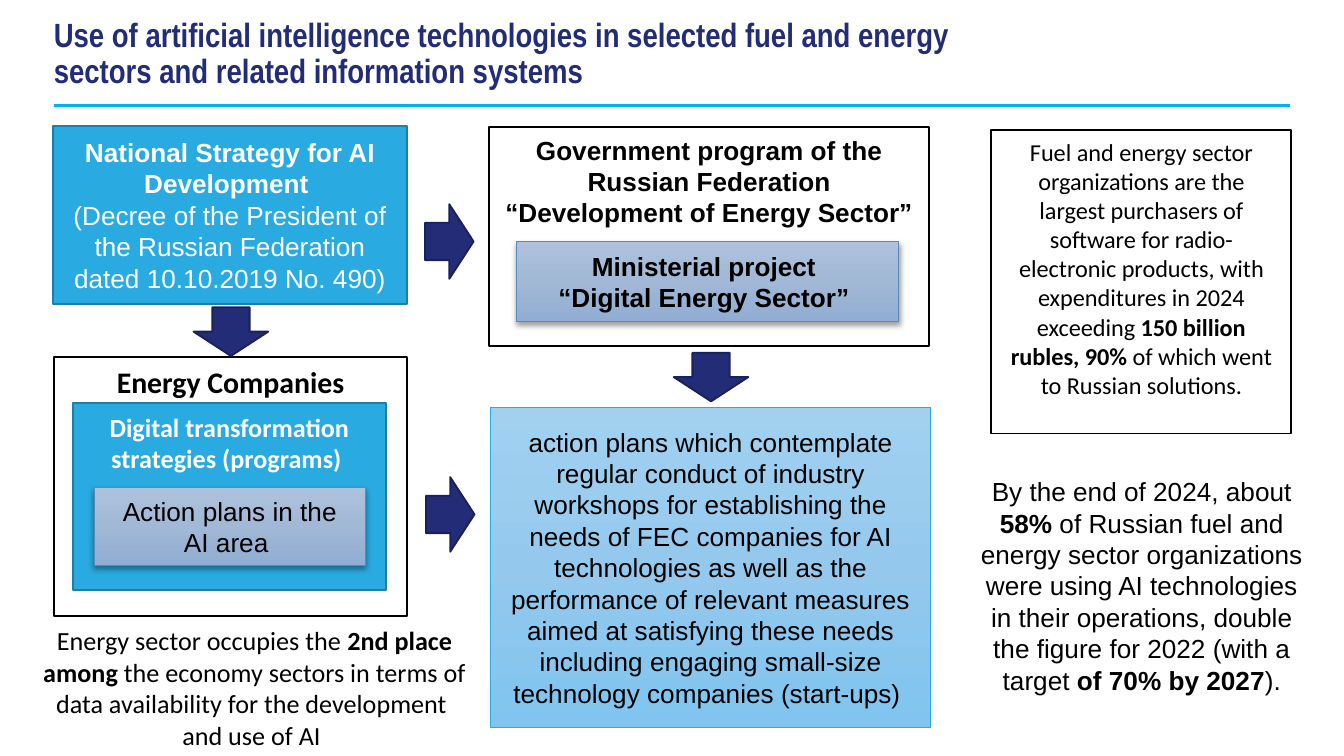
import copy

import lxml.etree
import pptx
import pptx.dml.color
import pptx.enum.shapes
import pptx.enum.text
import pptx.oxml.ns
import pptx.util

Pt = pptx.util.Pt
qn = pptx.oxml.ns.qn
SHAPES = pptx.enum.shapes.MSO_SHAPE
ANCHOR = pptx.enum.text.MSO_ANCHOR
ALIGN = pptx.enum.text.PP_ALIGN
AUTO_SIZE = pptx.enum.text.MSO_AUTO_SIZE

NAVY = "232C77"
BLUE = "29AAE1"
BLUE_EDGE = "1E7EA6"
STEEL = ("AFC2DC", "A1B8D6", "91ADD3")
SKY = ("A2D1F0", "94C9ED", "80C4EF")
INSETS = (7.2, 3.6, 7.2, 3.6)
WIDE_INSETS = (7.92, 4.32, 7.92, 4.32)


def color(value):
    return pptx.dml.color.RGBColor.from_string(value)


def set_attributes(target, values):
    for name, value in values.items():
        setattr(target, name, value)


class SlideBuilder:
    def __init__(self, presentation):
        self.slide = presentation.slides.add_slide(presentation.slide_layouts[5])

    def fill_text(self, shape, paragraphs, font="Arial", size=14, ink="000000",
                  anchor=ANCHOR.TOP, align=ALIGN.CENTER, insets=INSETS,
                  spacing=None, auto_size=AUTO_SIZE.NONE):
        frame = shape.text_frame
        sides = ("margin_left", "margin_top", "margin_right", "margin_bottom")
        set_attributes(frame, {"word_wrap": True, "vertical_anchor": anchor, "auto_size": auto_size})
        set_attributes(frame, dict(zip(sides, map(Pt, insets))))
        for index, runs in enumerate(paragraphs):
            paragraph = frame.add_paragraph() if index else frame.paragraphs[0]
            set_attributes(paragraph, {"alignment": align, "line_spacing": spacing})
            for text, bold in runs:
                for part, line in enumerate(text.split("\n")):
                    if part:
                        paragraph.add_line_break()
                        paragraph._p[-1].append(copy.deepcopy(run._r.rPr))
                    run = paragraph.add_run()
                    run.text = line
                    set_attributes(run.font, {"name": font, "size": Pt(size), "bold": bold})
                    run.font.color.rgb = color(ink)

    def title(self, box, text):
        shape = self.slide.shapes.title
        set_attributes(shape, dict(zip(("left", "top", "width", "height"), map(Pt, box))))
        self.fill_text(shape, [[(text, True)]], "Arial Narrow", 18, NAVY, ANCHOR.BOTTOM,
                       ALIGN.LEFT, (0, 3.6, 7.2, 3.6), 0.9)

    def rule(self, left, right, y):
        connector = self.slide.shapes.add_connector(
            pptx.enum.shapes.MSO_CONNECTOR.STRAIGHT, Pt(left), Pt(y), Pt(right), Pt(y))
        connector.line.color.rgb = color("00B0F0")
        connector.line.width = Pt(1.5)
        lxml.etree.SubElement(connector._element.spPr, qn("a:effectLst"))

    def shape(self, kind, box, fill, edge, edge_width=1):
        shape = self.slide.shapes.add_shape(kind, *map(Pt, box))
        shape.shadow.inherit = False
        if isinstance(fill, tuple):
            self.gradient(shape, fill)
        else:
            shape.fill.solid()
            shape.fill.fore_color.rgb = color(fill)
        shape.line.color.rgb = color(edge)
        shape.line.width = Pt(edge_width)
        return shape

    def gradient(self, shape, colors):
        shape.fill.gradient()
        shape.fill.gradient_angle = 270
        stop_list = shape._element.spPr.find(".//" + qn("a:gsLst"))
        stop_list.insert(1, copy.deepcopy(stop_list[0]))
        for stop, value, position in zip(shape.fill.gradient_stops, colors, (0, 0.5, 1)):
            stop.color.rgb = color(value)
            stop.position = position

    def box(self, box, paragraphs, fill="FFFFFF", edge="000000", edge_width=1, **style):
        shape = self.shape(SHAPES.RECTANGLE, box, fill, edge, edge_width)
        self.fill_text(shape, paragraphs, **style)
        return shape

    def raised_box(self, box, paragraphs):
        shape = self.box(box, paragraphs, STEEL, "588ABE", 0.5,
                         anchor=ANCHOR.MIDDLE, insets=WIDE_INSETS)
        effects = shape._element.spPr.find(qn("a:effectLst"))
        shadow = lxml.etree.SubElement(effects, qn("a:outerShdw"), blurRad=str(Pt(3.1)),
                                       dist=str(Pt(1.6)), dir="5400000", rotWithShape="0")
        tint = lxml.etree.SubElement(shadow, qn("a:srgbClr"), val="000000")
        lxml.etree.SubElement(tint, qn("a:alpha"), val="38000")

    def arrow(self, left, top, rotation=0):
        shape = self.shape(SHAPES.RIGHT_ARROW, (left, top, 26, 40), NAVY, "1A2158")
        shape.rotation = rotation

    def note(self, box, paragraphs, **style):
        shape = self.slide.shapes.add_textbox(*map(Pt, box))
        self.fill_text(shape, paragraphs, auto_size=AUTO_SIZE.SHAPE_TO_FIT_TEXT, **style)


def main():
    presentation = pptx.Presentation()
    presentation.slide_width = Pt(720)
    presentation.slide_height = Pt(405)
    builder = SlideBuilder(presentation)

    builder.rule(28.8, 691.2, 56.4)
    builder.title((28.8, 15, 513.4, 37.5),
                  "Use of artificial intelligence technologies in selected fuel and energy "
                  "sectors and related information systems")

    builder.box((28.5, 67.5, 189.5, 95.3),
                [[("National Strategy for AI Development ", True)],
                 [("(Decree of the President of the Russian Federation "
                   "dated 10.10.2019 No. 490)", False)]],
                BLUE, BLUE_EDGE, ink="FFFFFF", anchor=ANCHOR.MIDDLE)
    builder.box((28.9, 191.4, 189.2, 138.5), [[("Energy Companies", True)]],
                font="Calibri", size=16)
    builder.box((262, 68.3, 235.8, 117),
                [[("Government program of the Russian Federation "
                   "“Development of Energy Sector” ", True)]])
    builder.box((38.9, 216, 168, 100.1),
                [[("Digital transformation strategies (programs) ", True)]],
                BLUE, BLUE_EDGE, font="Calibri", ink="FFFFFF", insets=WIDE_INSETS)
    builder.raised_box((276.6, 129.4, 205, 43),
                       [[("Ministerial project \n“Digital Energy Sector” ", True)]])
    builder.box((262.8, 218.2, 235.8, 171.4),
                [[("action plans which contemplate regular conduct of industry workshops "
                   "for establishing the needs of FEC companies for AI technologies as well "
                   "as the performance of relevant measures aimed at satisfying these needs "
                   "including engaging small-size technology companies (start-ups) ", False)]],
                SKY, BLUE, 0.5, anchor=ANCHOR.MIDDLE)
    builder.raised_box((50.4, 261.4, 145.5, 41.5),
                       [[("Action plans in the AI area ", False)]])
    builder.box((531, 69.8, 160.8, 162.5),
                [[("Fuel and energy sector organizations are the largest purchasers of "
                   "software for radio-electronic products, with expenditures in 2024 "
                   "exceeding ", False),
                  ("150 billion rubles, 90% ", True),
                  ("of which went to Russian solutions.", False)]],
                font="Calibri", size=13)

    for left, top, rotation in ((110.7, 157.7, 90), (228.2, 255.6, 0),
                                (227.7, 109.4, 0), (367.9, 182, 90)):
        builder.arrow(left, top, rotation)

    builder.note((14.4, 331.2, 244, 74.9),
                 [[("Energy sector occupies the ", False),
                   ("2nd place among ", True),
                   ("the economy sectors in terms of data availability for the development "
                    "\nand use of AI ", False)]], font="Calibri")
    builder.note((517, 251.3, 189.4, 126),
                 [[("By the end of 2024, about ", False),
                   ("58%", True),
                   (" of Russian fuel and energy sector organizations were using AI "
                    "technologies in their operations, double the figure for 2022 "
                    "(with a target ", False),
                   ("of 70% by 2027", True),
                   (").", False)]])

    presentation.save("out.pptx")


if __name__ == "__main__":
    main()
